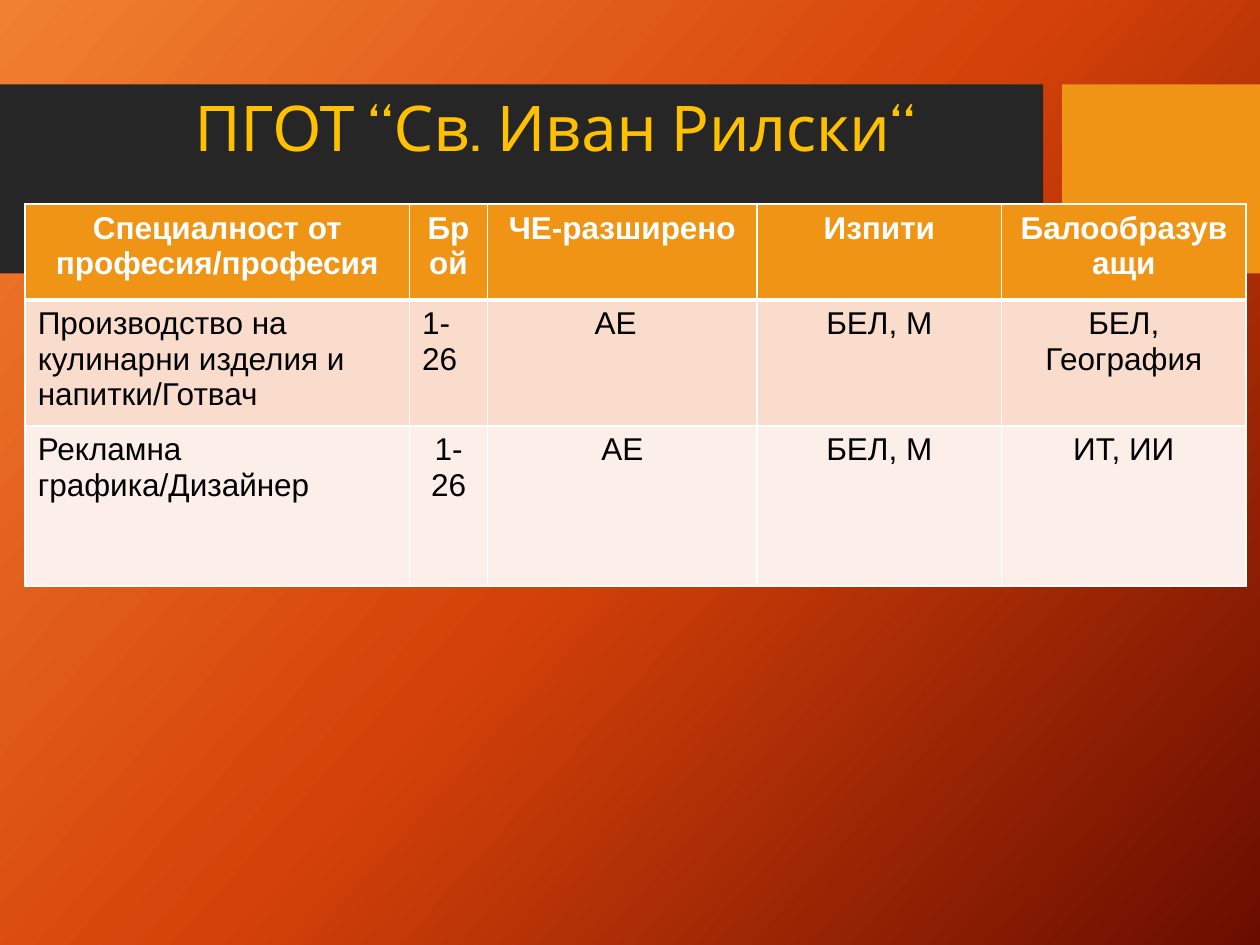
"""Build the slide with the table of specialities, exams and scoring subjects."""
from copy import deepcopy

from lxml import etree
from pptx import Presentation
from pptx.dml.color import RGBColor
from pptx.enum.shapes import MSO_SHAPE
from pptx.enum.text import MSO_ANCHOR, PP_ALIGN
from pptx.oxml.ns import qn
from pptx.util import Inches, Pt

RECTANGLE = MSO_SHAPE.RECTANGLE
MIDDLE = MSO_ANCHOR.MIDDLE
LEFT, CENTER = PP_ALIGN.LEFT, PP_ALIGN.CENTER
THEME = {
    "gradient": [(0, "F18031"), (0.5, "D54209"), (1, "6A0D00")],
    "band": "262626", "accent": "F09415", "title": "FFC000",
    "white": "FFFFFF", "black": "000000",
    "rows": ["F09415", "F9DCCC", "FCEEE8"],
    "title_font": "Cabin", "table_font": "Arial",
    "title_size": 36, "table_size": 18,
}


def write_text(frame, text, *, font, size, color, bold=False, align=CENTER):
    paragraph = frame.paragraphs[0]
    paragraph.alignment = align
    span = paragraph.add_run()
    span.text = text
    span.font.name = font
    span.font.size = Pt(size)
    span.font.bold = bold
    span.font.color.rgb = RGBColor.from_string(color)
    return paragraph


def set_borders(cell, **widths):
    properties = cell._tc.get_or_add_tcPr()
    for index, (side, width) in enumerate(widths.items()):
        line = etree.Element(qn(f"a:{side}"), w=str(Pt(width)))
        fill = etree.SubElement(line, qn("a:solidFill"))
        etree.SubElement(fill, qn("a:srgbClr"), val=THEME["white"])
        properties.insert(index, line)


deck = Presentation()
deck.slide_width, deck.slide_height = Inches(10), Inches(7.5)
page = deck.slides.add_slide(deck.slide_layouts[5])

background = page.background.fill
background.gradient()
background.gradient_angle = 360 - 42
stop_list = page.element.xpath(".//a:gsLst")[0]
stop_list.append(deepcopy(stop_list[-1]))
for stop, (position, color) in zip(background.gradient_stops, THEME["gradient"]):
    stop.position = position
    stop.color.rgb = RGBColor.from_string(color)

for left, width, color in [(0, 8.28, THEME["band"]), (8.43, 1.57, THEME["accent"])]:
    block = page.shapes.add_shape(RECTANGLE, Inches(left), Inches(0.67), Inches(width), Inches(1.5))
    block.shadow.inherit = False
    block.fill.solid()
    block.fill.fore_color.rgb = RGBColor.from_string(color)
    block.line.fill.background()

title = page.shapes.title
page.shapes.element.append(title.element)
title.left, title.top = Inches(0.58), Inches(0.29)
title.width, title.height = Inches(7.65), Inches(1.5)
title.text_frame.vertical_anchor = MIDDLE
heading = write_text(title.text_frame, "ПГОТ “Св. Иван Рилски“", font=THEME["title_font"],
                     size=THEME["title_size"], color=THEME["title"])
heading.line_spacing = 0.9

rows = [
    ["Специалност от професия/професия", "Брой", "ЧЕ-разширено", "Изпити", "Балообразуващи"],
    ["Производство на кулинарни изделия и напитки/Готвач", "1-26", "АЕ", "БЕЛ, М", "БЕЛ, География"],
    ["Рекламна графика/Дизайнер", "1-26", "АЕ", "БЕЛ, М", "ИТ, ИИ"],
]
column_widths = [3.05, 0.62, 2.14, 1.94, 1.94]
row_heights = [0.76, 1, 1.27]
left_aligned = {(1, 0), (1, 1), (1, 2), (2, 0)}
table = page.shapes.add_table(len(rows), len(column_widths), Inches(0.2), Inches(1.62),
                              Inches(sum(column_widths)), Inches(sum(row_heights))).table
for column, width in zip(table.columns, column_widths):
    column.width = Inches(width)
for row, height in zip(table.rows, row_heights):
    row.height = Inches(height)

for row_index, texts in enumerate(rows):
    is_header = row_index == 0
    for column_index, text in enumerate(texts):
        cell = table.cell(row_index, column_index)
        cell.fill.solid()
        cell.fill.fore_color.rgb = RGBColor.from_string(THEME["rows"][row_index])
        set_borders(cell, lnL=1, lnR=1, lnT=3 if row_index == 1 else 1, lnB=3 if is_header else 1)
        write_text(cell.text_frame, text, font=THEME["table_font"], size=THEME["table_size"],
                   color=THEME["white"] if is_header else THEME["black"], bold=is_header,
                   align=LEFT if (row_index, column_index) in left_aligned else CENTER)
table.cell(1, 2).margin_left = Inches(0.85)

deck.save("out.pptx")
